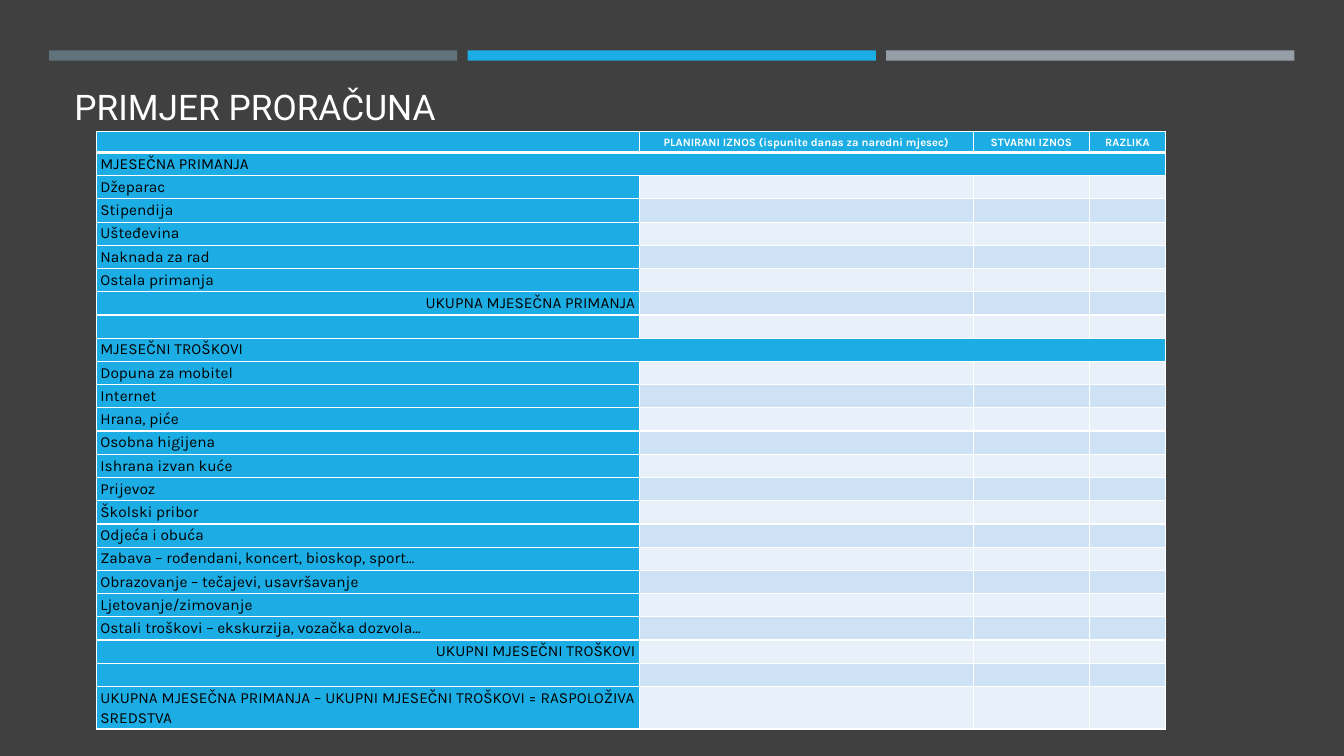
from lxml import etree
from pptx import Presentation
from pptx.dml import color
from pptx.enum import shapes, text
from pptx.oxml import ns
from pptx.util import Pt

BLUE, WHITE, BLACK = "1CADE4", "FFFFFF", "000000"
BANDS = ["E8F1FA", "CDE3F5"]
SIDES = ["lnL", "lnR", "lnT", "lnB"]


def paint(fill, hex_color):
    fill.solid()
    fill.fore_color.rgb = color.RGBColor.from_string(hex_color)


def style(para, name, size, hex_color, bold=False):
    para.font.name = name
    para.font.size = Pt(size)
    para.font.bold = bold
    paint(para.font.fill, hex_color)


deck = Presentation()
deck.slide_width, deck.slide_height = Pt(960), Pt(540)
page = deck.slides.add_slide(deck.slide_layouts[6])
paint(page.background.fill, "404040")

# Three bars across the top
for index, bar_color in enumerate(["60727A", BLUE, "969FA7"]):
    bar = page.shapes.add_shape(shapes.MSO_SHAPE.RECTANGLE,
                                Pt(35 + 299 * index), Pt(36), Pt(291.6), Pt(7.4))
    bar.shadow.inherit = False
    paint(bar.fill, bar_color)
    bar.line.fill.background()

# Title
title = page.shapes.add_textbox(Pt(46), Pt(55.4), Pt(868), Pt(39)).text_frame
title.word_wrap = True
title.vertical_anchor = text.MSO_ANCHOR.BOTTOM
title.text = "PRIMJER PRORAČUNA"
style(title.paragraphs[0], "Roboto", 25.2, WHITE)

# Budget table
headings = ["", "PLANIRANI IZNOS (ispunite danas za naredni mjesec)",
            "STVARNI IZNOS", "RAZLIKA"]
sections = ["MJESEČNA PRIMANJA", "MJESEČNI TROŠKOVI"]
totals = ["UKUPNA MJESEČNA PRIMANJA", "UKUPNI MJESEČNI TROŠKOVI"]
balance = ("UKUPNA MJESEČNA PRIMANJA – UKUPNI MJESEČNI TROŠKOVI"
           " = RASPOLOŽIVA SREDSTVA")
labels = [
    sections[0], "Džeparac", "Stipendija", "Ušteđevina", "Naknada za rad",
    "Ostala primanja", totals[0], "",
    sections[1], "Dopuna za mobitel", "Internet", "Hrana, piće",
    "Osobna higijena", "Ishrana izvan kuće", "Prijevoz", "Školski pribor",
    "Odjeća i obuća", "Zabava – rođendani, koncert, bioskop, sport…",
    "Obrazovanje – tečajevi, usavršavanje", "Ljetovanje/zimovanje",
    "Ostali troškovi – ekskurzija, vozačka dozvola…", totals[1], "",
    balance,
]
rows = [headings] + [[label, "", "", ""] for label in labels]
widths = [388, 238.6, 82.8, 54.4]
heights = [15.2] + [16.6] * (len(labels) - 1) + [28.8]

table = page.shapes.add_table(len(rows), len(widths), Pt(68.8), Pt(93.7),
                              Pt(sum(widths)), Pt(sum(heights))).table
for column, width in zip(table.columns, widths):
    column.width = Pt(width)
for row, height in zip(table.rows, heights):
    row.height = Pt(height)

for row_index, values in enumerate(rows):
    is_header = row_index == 0
    is_section = values[0] in sections
    for column_index, value in enumerate(values):
        cell = table.cell(row_index, column_index)
        cell.margin_left = cell.margin_right = Pt(2.9)
        cell.margin_top = cell.margin_bottom = 0
        if is_header:
            cell.vertical_anchor = text.MSO_ANCHOR.MIDDLE

        properties = cell._tc.get_or_add_tcPr()
        for side in SIDES:
            thick = (is_header and side == "lnB") or (row_index == 1 and side == "lnT")
            border = etree.SubElement(properties, ns.qn("a:" + side),
                                      w=str(Pt(3 if thick else 1)))
            solid = etree.SubElement(border, ns.qn("a:solidFill"))
            etree.SubElement(solid, ns.qn("a:srgbClr"), val=WHITE)
        on_blue = is_header or is_section or column_index == 0
        paint(cell.fill, BLUE if on_blue else BANDS[row_index % 2])

        cell.text = value
        para = cell.text_frame.paragraphs[0]
        if not value:
            etree.SubElement(para._p, ns.qn("a:endParaRPr"), sz="800")
            continue
        para.line_spacing = 1.15
        para.space_after = Pt(10)
        if is_header:
            para.alignment = text.PP_ALIGN.CENTER
            style(para, "Karla", 8, WHITE, bold=True)
        else:
            style(para, "Karla", 11, BLACK)
        if value in totals:
            para.alignment = text.PP_ALIGN.RIGHT
        elif value == balance:
            para.alignment = text.PP_ALIGN.JUSTIFY
    if is_section:
        table.cell(row_index, 0).merge(table.cell(row_index, len(widths) - 1))

deck.save("out.pptx")
